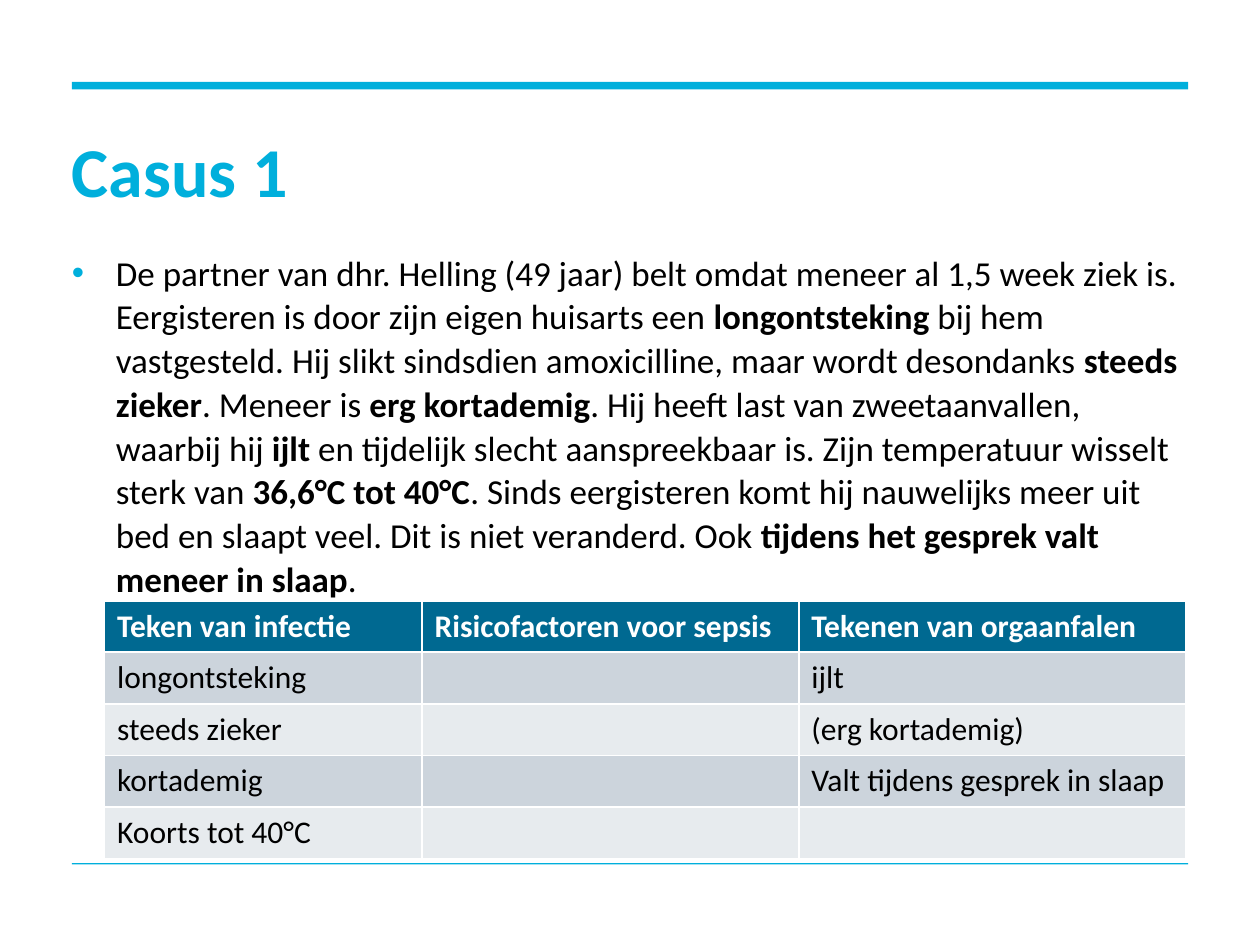
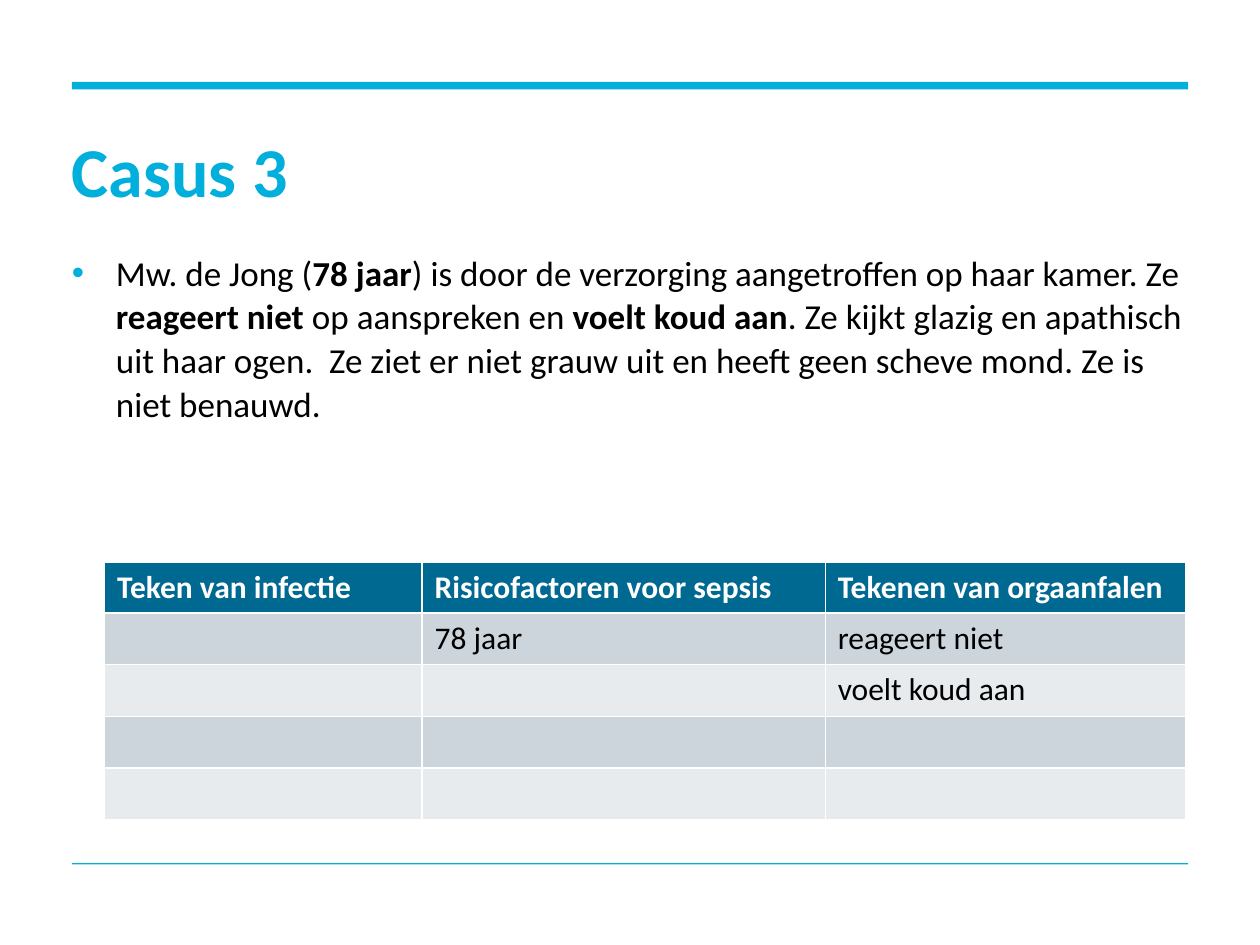
import pptx
import pptx.util
import pptx.dml.color
import pptx.enum.shapes
import pptx.enum.text
from lxml import etree

Inches = pptx.util.Inches
Pt = pptx.util.Pt

FONT = "Calibri"
CYAN, BLUE, WHITE, BLACK = "00AFDC", "006991", "FFFFFF", "000000"
STRIPES = ["CCD4DC", "E7EBEE"]
LEFT, WIDTH = 0.57, 8.86
HEADS = ["Teken van infectie", "Risicofactoren voor sepsis",
         "Tekenen van orgaanfalen"]

CASES = [
    {
        "title": "Casus 1",
        "story": "De partner van dhr. Helling (49 jaar) belt omdat meneer al "
                 "1,5 week ziek is. Eergisteren is door zijn eigen huisarts "
                 "een *longontsteking* bij hem vastgesteld. Hij slikt "
                 "sindsdien amoxicilline, maar wordt desondanks *steeds "
                 "zieker*. Meneer is *erg kortademig*. Hij heeft last van "
                 "zweetaanvallen, waarbij hij *ijlt* en tijdelijk slecht "
                 "aanspreekbaar is. Zijn temperatuur wisselt sterk van "
                 "*36,6°C tot 40°C*. Sinds eergisteren komt hij nauwelijks "
                 "meer uit bed en slaapt veel. Dit is niet veranderd. Ook "
                 "*tijdens het gesprek valt meneer in slaap*.",
        "top": 4.77,
        "cols": [2.52, 2.99, 3.07],
        "signs": [["longontsteking", "", "ijlt"],
                  ["steeds zieker", "", "(erg kortademig)"],
                  ["kortademig", "", "Valt tijdens gesprek in slaap"],
                  ["Koorts tot 40°C", "", ""]],
    },
    {
        "title": "Casus 3",
        "story": "Mw. de Jong (*78 jaar*) is door de verzorging aangetroffen "
                 "op haar kamer. Ze *reageert niet *op aanspreken en *voelt "
                 "koud aan*. Ze kijkt glazig en apathisch uit haar ogen.  Ze "
                 "ziet er niet grauw uit en heeft geen scheve mond. Ze is "
                 "niet benauwd.",
        "top": 4.46,
        "cols": [2.52, 3.2, 2.86],
        "signs": [["", "78 jaar", "reageert niet"],
                  ["", "", "voelt koud aan"],
                  ["", "", ""],
                  ["", "", ""]],
    },
]


def rgb(code):
    return pptx.dml.color.RGBColor.from_string(code)


def paint(part, code):
    part.fill.solid()
    part.fill.fore_color.rgb = rgb(code)


def write(frame, text, size=18, color=BLACK, bold=False, lead=None,
          bullet=None):
    """Fill a frame with one paragraph; *stars* switch bold on and off."""
    para = frame.paragraphs[0]
    para.alignment = pptx.enum.text.PP_ALIGN.LEFT
    if lead:
        para.line_spacing = Pt(lead)
    if bullet:
        add_bullet(para, bullet)
    para.font.size = Pt(size)
    for i, piece in enumerate(text.split("*")):
        if not piece:
            continue
        run = para.add_run()
        run.text = piece
        font = run.font
        font.name, font.size = FONT, Pt(size)
        font.bold = bold or i % 2 == 1
        font.color.rgb = rgb(color)


def add_bullet(para, color, indent=0.35):
    props = para._p.get_or_add_pPr()
    props.set("marL", str(Inches(indent)))
    props.set("indent", str(-Inches(indent)))
    ns = "{%s}" % props.nsmap["a"]
    tint = etree.SubElement(props, ns + "buClr")
    etree.SubElement(tint, ns + "srgbClr", val=color)
    etree.SubElement(props, ns + "buFont", typeface="Arial")
    etree.SubElement(props, ns + "buChar", char="•")


def set_frame(frame, anchor):
    frame.word_wrap = True
    frame.auto_size = pptx.enum.text.MSO_AUTO_SIZE.NONE
    frame.vertical_anchor = anchor
    frame.margin_left = frame.margin_right = 0
    frame.margin_top = frame.margin_bottom = 0


def add_bands(slide):
    for top, height in [(0.65, 0.06), (6.85, 0.01)]:
        band = slide.shapes.add_shape(
            pptx.enum.shapes.MSO_SHAPE.RECTANGLE,
            Inches(LEFT), Inches(top), Inches(WIDTH), Inches(height))
        band.shadow.inherit = False
        paint(band, CYAN)
        band.line.fill.background()


def add_title(slide, text, left, top, width, height):
    title = slide.shapes.title
    title.left, title.top = Inches(left), Inches(top)
    title.width, title.height = Inches(width), Inches(height)
    set_frame(title.text_frame, pptx.enum.text.MSO_ANCHOR.MIDDLE)
    write(title.text_frame, text, size=40, color=CYAN, bold=True, lead=42)


def add_story(slide, text, left, top, width, height):
    box = slide.shapes.add_textbox(Inches(left), Inches(top),
                                   Inches(width), Inches(height))
    set_frame(box.text_frame, pptx.enum.text.MSO_ANCHOR.TOP)
    write(box.text_frame, text, size=20, lead=25, bullet=CYAN)


def add_signs(slide, signs, cols, left, top, head=0.4, step=0.41):
    rows = [HEADS] + signs
    table = slide.shapes.add_table(
        len(rows), len(cols), Inches(left), Inches(top),
        Inches(sum(cols)), Inches(head + step * len(signs))).table
    for col, width in zip(table.columns, cols):
        col.width = Inches(width)
    for r, row in enumerate(rows):
        table.rows[r].height = Inches(step if r else head)
        for c, text in enumerate(row):
            cell = table.cell(r, c)
            paint(cell, STRIPES[(r - 1) % 2] if r else BLUE)
            write(cell.text_frame, text, bold=r == 0,
                  color=BLACK if r else WHITE)


def add_case(deck, case):
    slide = deck.slides.add_slide(deck.slide_layouts.get_by_name("Title Only"))
    add_bands(slide)
    add_title(slide, case["title"], LEFT, 1.1, WIDTH, 0.58)
    add_story(slide, case["story"], LEFT, 1.98, WIDTH, 4.51)
    add_signs(slide, case["signs"], case["cols"], 0.83, case["top"])


def main():
    deck = pptx.Presentation()
    deck.slide_width, deck.slide_height = Inches(10), Inches(7.5)
    for case in CASES:
        add_case(deck, case)
    deck.save("out.pptx")


if __name__ == "__main__":
    main()
